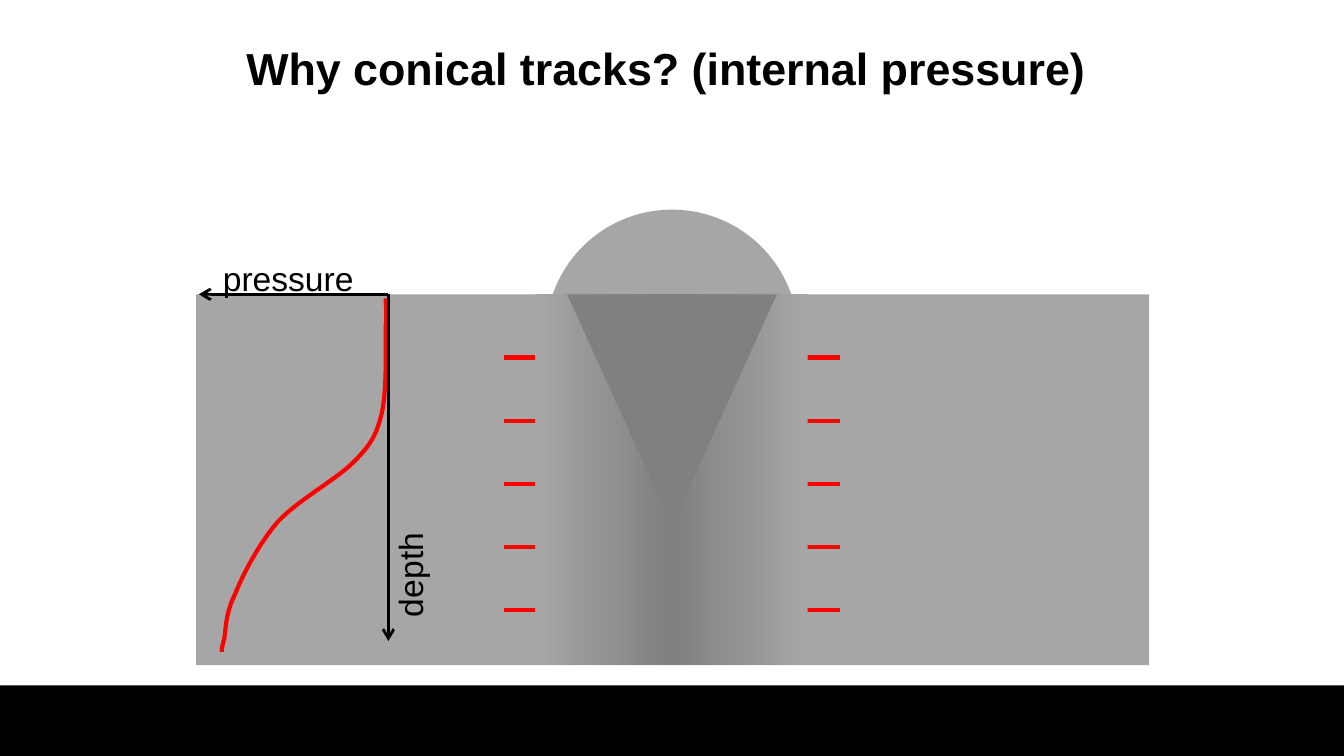
from copy import deepcopy
from typing import NamedTuple

from pptx import Presentation
from pptx.dml.color import RGBColor
from pptx.enum.shapes import MSO_CONNECTOR, MSO_SHAPE
from pptx.enum.text import MSO_ANCHOR, MSO_AUTO_SIZE, PP_ALIGN
from pptx.oxml.ns import qn
from pptx.util import Inches, Pt

STRAIGHT = MSO_CONNECTOR.STRAIGHT
RECTANGLE, OVAL = MSO_SHAPE.RECTANGLE, MSO_SHAPE.OVAL
TRIANGLE = MSO_SHAPE.ISOSCELES_TRIANGLE
FONT = "Arial"
BLACK, RED, SOLID_GRAY, TRACK_GRAY = "000000", "FF0000", "A6A6A6", "808080"

Point = tuple[float, float]


class Box(NamedTuple):
    left: float
    top: float
    width: float
    height: float

    def lengths(self) -> list[int]:
        return [Inches(value) for value in self]


class Label(NamedTuple):
    text: str
    box: Box
    upward: bool = False


SLIDE_WIDTH = 10
SLIDE_HEIGHT = SLIDE_WIDTH * 9 / 16
FOOTER_TOP = 5.1
SURFACE = 2.19
SLAB = Box(1.46, SURFACE, 7.09, 2.76)
HEATED_ZONE = Box(3.98, SURFACE, 2.03, 2.76)
ORIGIN = (2.89, SURFACE)
AXIS_ENDS = [(1.48, SURFACE), (2.89, 4.77)]
AXIS_LABELS = [
    Label("pressure", Box(1.56, 1.87, 1.18, 0.4)),
    Label("depth", Box(2.85, 3.96, 0.5, 0.73), upward=True),
]
# Start point, then two control points and an end point per Bézier segment
PRESSURE_CURVE = [
    (2.87, 2.22), (2.87, 2.26), (2.88, 2.31), (2.87, 2.45),
    (2.87, 2.59), (2.88, 2.91), (2.84, 3.08),
    (2.8, 3.24), (2.76, 3.31), (2.63, 3.44),
    (2.5, 3.57), (2.22, 3.72), (2.07, 3.88),
    (1.93, 4.04), (1.81, 4.27), (1.75, 4.42),
    (1.68, 4.56), (1.68, 4.68), (1.67, 4.75),
    (1.65, 4.82), (1.65, 4.84), (1.65, 4.85),
]


def color(hex_value: str) -> RGBColor:
    return RGBColor.from_string(hex_value)


def add_area(slide, kind, box: Box, fill: str):
    area = slide.shapes.add_shape(kind, *box.lengths())
    area.shadow.inherit = False
    area.fill.solid()
    area.fill.fore_color.rgb = color(fill)
    area.line.fill.background()
    return area


def fill_gradient(area, colors: list[str]) -> None:
    """Spread the colours evenly from left to right."""
    area.fill.gradient()
    area.fill.gradient_angle = 0
    stop_list = area.fill._fill._gradFill.find(qn("a:gsLst"))
    while len(stop_list) < len(colors):
        stop_list.append(deepcopy(stop_list[0]))
    for index, (stop, hex_value) in enumerate(zip(area.fill.gradient_stops, colors)):
        stop.color.rgb = color(hex_value)
        stop.position = index / (len(colors) - 1)


def add_arrow(slide, start: Point, end: Point, hex_value: str, width: float) -> None:
    arrow = slide.shapes.add_connector(
        STRAIGHT, *[Inches(value) for value in (*start, *end)]
    )
    arrow.line.color.rgb = color(hex_value)
    arrow.line.width = Pt(width)
    outline = arrow.line._get_or_add_ln()
    outline.append(outline.makeelement(qn("a:tailEnd"), {"type": "arrow"}))
    properties = arrow._element.spPr
    properties.append(properties.makeelement(qn("a:effectLst"), {}))


def bezier_points(nodes: list[Point], steps: int = 12) -> list[Point]:
    points = [nodes[0]]
    for first in range(0, len(nodes) - 1, 3):
        segment = nodes[first:first + 4]
        for step in range(1, steps + 1):
            t = step / steps
            weights = ((1 - t) ** 3, 3 * t * (1 - t) ** 2, 3 * t * t * (1 - t), t ** 3)
            points.append((
                sum(w * x for w, (x, _) in zip(weights, segment)),
                sum(w * y for w, (_, y) in zip(weights, segment)),
            ))
    return points


def add_curve(slide, nodes: list[Point]) -> None:
    start, *rest = [(Inches(x), Inches(y)) for x, y in bezier_points(nodes)]
    builder = slide.shapes.build_freeform(*start)
    builder.add_line_segments(rest, close=False)
    curve = builder.convert_to_shape()
    curve.shadow.inherit = False
    curve.fill.background()
    curve.line.color.rgb = color(RED)
    curve.line.width = Pt(2.25)


def format_font(paragraph, size: float, bold: bool = False) -> None:
    paragraph.font.name = FONT
    paragraph.font.size = Pt(size)
    paragraph.font.bold = bold
    paragraph.font.color.rgb = color(BLACK)


def add_label(slide, label: Label) -> None:
    frame = slide.shapes.add_textbox(*label.box.lengths()).text_frame
    frame.word_wrap = False
    frame.auto_size = MSO_AUTO_SIZE.SHAPE_TO_FIT_TEXT
    if label.upward:
        frame._txBody.bodyPr.set("vert", "vert270")
    frame.text = label.text
    format_font(frame.paragraphs[0], 18)


def set_title(slide, text: str) -> None:
    title = slide.shapes.title
    title.left, title.top, title.width, title.height = Box(0.95, 0.2, 8.1, 0.72).lengths()
    frame = title.text_frame
    frame.margin_left = frame.margin_right = Inches(0.1)
    frame.margin_top = frame.margin_bottom = Inches(0.1)
    frame.vertical_anchor = MSO_ANCHOR.TOP
    frame.auto_size = MSO_AUTO_SIZE.NONE
    frame.text = text
    heading = frame.paragraphs[0]
    heading.alignment = PP_ALIGN.CENTER
    heading.line_spacing = 1.0
    format_font(heading, 24, bold=True)


def main() -> None:
    presentation = Presentation()
    presentation.slide_width = Inches(SLIDE_WIDTH)
    presentation.slide_height = Inches(SLIDE_HEIGHT)
    slide = presentation.slides.add_slide(presentation.slide_layouts[5])

    footer = Box(0, FOOTER_TOP, SLIDE_WIDTH, SLIDE_HEIGHT - FOOTER_TOP)
    add_area(slide, RECTANGLE, footer, BLACK)
    add_area(slide, OVAL, Box(4.06, 1.56, 1.88, 1.88), SOLID_GRAY)
    set_title(slide, "Why conical tracks? (internal pressure) ")
    add_area(slide, RECTANGLE, SLAB, SOLID_GRAY)

    for row in range(5):
        depth = 2.66 + row * 0.47
        for outer, inner in ((3.75, 4.45), (6.25, 5.55)):
            add_arrow(slide, (outer, depth), (inner, depth), RED, 2.25)

    add_curve(slide, PRESSURE_CURVE)
    for end in AXIS_ENDS:
        add_arrow(slide, ORIGIN, end, BLACK, 1.5)
    for label in AXIS_LABELS:
        add_label(slide, label)

    heated_zone = add_area(slide, RECTANGLE, HEATED_ZONE, SOLID_GRAY)
    fill_gradient(heated_zone, [SOLID_GRAY, TRACK_GRAY, SOLID_GRAY])
    cone = add_area(slide, TRIANGLE, Box(4.22, SURFACE, 1.56, 1.72), TRACK_GRAY)
    cone.rotation = 180

    presentation.save("out.pptx")


if __name__ == "__main__":
    main()
